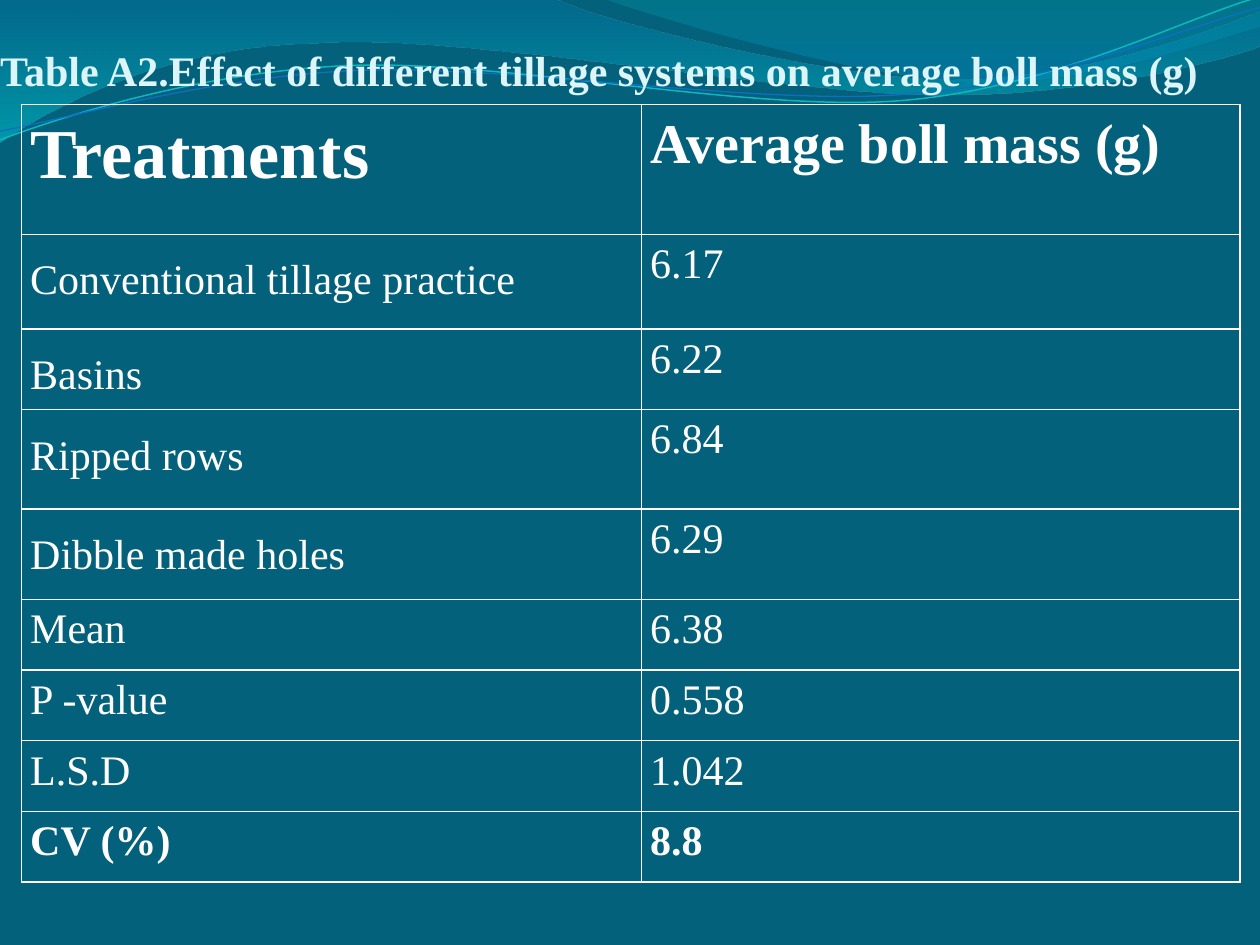
import math

import pptx
import pptx.util
import pptx.dml.color
import pptx.enum.text
import pptx.oxml
import pptx.oxml.ns
from lxml import etree

COLORS = {
    "background": "04617B", "title": "DBF5F9", "white": "FFFFFF",
    "deep": "0074A1", "aqua": "00C6CF", "teal": "00A1A9", "sky": "008BBF",
    "cyan line": "0AB8BF", "blue line": "0F6FC6",
}
FONT = "Times New Roman"
TITLE = "Table A2.Effect of different tillage systems on average boll mass (g)"
ROWS = [
    ("Treatments", "Average boll mass (g)", 1.03),
    ("Conventional tillage practice", "6.17", 0.75),
    ("Basins", "6.22", 0.64),
    ("Ripped rows", "6.84", 0.79),
    ("Dibble made holes", "6.29", 0.72),
    ("Mean", "6.38", 0.56),
    ("P -value", "0.558", 0.56),
    ("L.S.D", "1.042", 0.56),
    ("CV (%)", "8.8", 0.56),
]
COLUMN_WIDTHS = (4.92, 4.75)
HEADER_SIZES = (40, 32)
TREATMENT_ROWS = range(1, 5)

BANDS = [
    {"path": [(0, 0), (4.4, -0.01), (4.76, 0.17, 6.64, 0.63, 7.58, 0.63),
              (8.53, 0.63, 9.58, 0.26, 10, 0.09), (10.01, 0.36),
              (9.83, 0.44, 8.7, 0.76, 7.46, 0.75),
              (6.22, 0.75, 3.82, 0.28, 2.57, 0.34),
              (1.29, 0.36, 0.46, 0.83, -0.01, 1.13)],
     "stops": [(0, "deep", 45), (1, "aqua", 55)]},
    {"path": [(4.79, -0.01), (5.09, 0.11, 6.82, 0.62, 7.69, 0.65),
              (8.56, 0.69, 9.61, 0.32, 10, 0.21), (10, 0)],
     "stops": [(0, "teal", 30), (0.8, "sky", 45)]},
]
WAVE_TURN = -2.7
WAVES = [
    {"path": [(0, 1.11), (0.48, 0.93, 1.58, 0.57, 2.77, 0.52),
              (3.95, 0.47, 5.93, 0.89, 7.13, 0.8),
              (8.33, 0.71, 9.38, 0.15, 9.98, -0.02)],
     "center": (4.99, 0.58), "color": "cyan line", "width": 0.85},
    {"path": [(0, 1.04), (0.47, 0.96, 1.64, 0.61, 2.83, 0.56),
              (4.03, 0.51, 5.97, 0.84, 7.17, 0.75),
              (8.36, 0.67, 9.41, 0.21, 10, 0.06)],
     "center": (5, 0.59), "color": "blue line", "width": 0.75},
]


def rgb(name):
    return pptx.dml.color.RGBColor.from_string(COLORS[name])


def level(segment, center):
    angle = math.radians(-WAVE_TURN)
    result = ()
    for x, y in zip(segment[::2], segment[1::2]):
        across, down = x - center[0], y - center[1]
        result += (center[0] + across * math.cos(angle) - down * math.sin(angle),
                   center[1] + across * math.sin(angle) + down * math.cos(angle))
    return result


def add_outline(page, path, closed):
    points = [(pptx.util.Inches(x), pptx.util.Inches(y))
              for segment in path for x, y in zip(segment[::2], segment[1::2])]
    builder = page.shapes.build_freeform(*points[0])
    builder.add_line_segments(points[1:], close=closed)
    shape = builder.convert_to_shape()
    shape.shadow.inherit = False
    lines = iter(list(shape.element.spPr.iter(pptx.oxml.ns.qn("a:lnTo"))))
    for segment in path[1:]:
        line = next(lines)
        if len(segment) == 6:
            curve = etree.Element(pptx.oxml.ns.qn("a:cubicBezTo"))
            line.addprevious(curve)
            for part in (line, next(lines), next(lines)):
                curve.append(part[0])
                part.getparent().remove(part)
    return shape


def add_band(page, path, stops):
    shape = add_outline(page, path, True)
    shape.line.fill.background()
    shape.fill.gradient()
    shape.fill.gradient_angle = 270
    for stop, (position, color, _) in zip(shape.fill.gradient_stops, stops):
        stop.position = position
        stop.color.rgb = rgb(color)
    tints = shape.element.spPr.iter(pptx.oxml.ns.qn("a:srgbClr"))
    for tint, (_, _, opacity) in zip(tints, stops):
        etree.SubElement(tint, pptx.oxml.ns.qn("a:alpha"), val=str(opacity * 1000))


def add_wave(page, path, center, color, width):
    shape = add_outline(page, [level(segment, center) for segment in path], False)
    shape.rotation = WAVE_TURN
    shape.fill.background()
    shape.line.color.rgb = rgb(color)
    shape.line.width = pptx.util.Pt(width)


def write(frame, text, size=24, bold=False, color="white", align="LEFT", spacing=1, after=0):
    para = frame.paragraphs[0]
    para.alignment = getattr(pptx.enum.text.PP_ALIGN, align)
    para.line_spacing = spacing
    para.space_before = pptx.util.Pt(0)
    para.space_after = pptx.util.Pt(after)
    span = para.add_run()
    span.text = text
    span.font.name = FONT
    span.font.size = pptx.util.Pt(size)
    span.font.bold = bold
    span.font.color.rgb = rgb(color)


def set_margins(box, left, top, right, bottom):
    box.margin_left, box.margin_top, box.margin_right, box.margin_bottom = map(
        pptx.util.Inches, (left, top, right, bottom))


def add_borders(cell):
    properties = cell.fill._xPr
    for index, side in enumerate(("lnL", "lnR", "lnT", "lnB")):
        properties.insert(index, pptx.oxml.parse_xml(
            f'<a:{side} {pptx.oxml.ns.nsdecls("a")} w="{pptx.util.Pt(1)}"><a:solidFill>'
            f'<a:srgbClr val="{COLORS["white"]}"/></a:solidFill></a:{side}>'))


def add_title(page):
    title = page.shapes.title
    page.shapes.element.append(title.element)
    title.left, title.top, title.width, title.height = map(
        pptx.util.Inches, (0, 0, 10, 0.75))
    frame = title.text_frame
    frame.word_wrap = True
    frame.auto_size = pptx.enum.text.MSO_AUTO_SIZE.NONE
    frame.vertical_anchor = pptx.enum.text.MSO_ANCHOR.BOTTOM
    set_margins(frame, 0, 0.05, 0, 0)
    write(frame, TITLE, bold=True, color="title")


def add_results(page):
    area = (0.17, 0.83, sum(COLUMN_WIDTHS), sum(row[-1] for row in ROWS))
    table = page.shapes.add_table(
        len(ROWS), len(COLUMN_WIDTHS), *map(pptx.util.Inches, area)).table
    table.first_row = table.horz_banding = False
    for column, width in zip(table.columns, COLUMN_WIDTHS):
        column.width = pptx.util.Inches(width)
    for r, (*texts, height) in enumerate(ROWS):
        table.rows[r].height = pptx.util.Inches(height)
        for c, text in enumerate(texts):
            cell = table.cell(r, c)
            cell.fill.background()
            set_margins(cell, 0.07, 0, 0.07, 0)
            add_borders(cell)
            treatment = c == 0 and r in TREATMENT_ROWS
            write(cell.text_frame, text, align="JUSTIFY",
                  size=HEADER_SIZES[c] if r == 0 else 24,
                  bold=r in (0, len(ROWS) - 1),
                  spacing=1.5 if treatment else 1.15,
                  after=0 if treatment or r == 0 else 6)


def main():
    deck = pptx.Presentation()
    deck.slide_width = pptx.util.Inches(10)
    deck.slide_height = pptx.util.Inches(7.5)
    page = deck.slides.add_slide(deck.slide_layouts.get_by_name("Title Only"))
    page.background.fill.solid()
    page.background.fill.fore_color.rgb = rgb("background")
    for band in BANDS:
        add_band(page, **band)
    for wave in WAVES:
        add_wave(page, **wave)
    add_title(page)
    add_results(page)
    deck.save("out.pptx")


if __name__ == "__main__":
    main()
